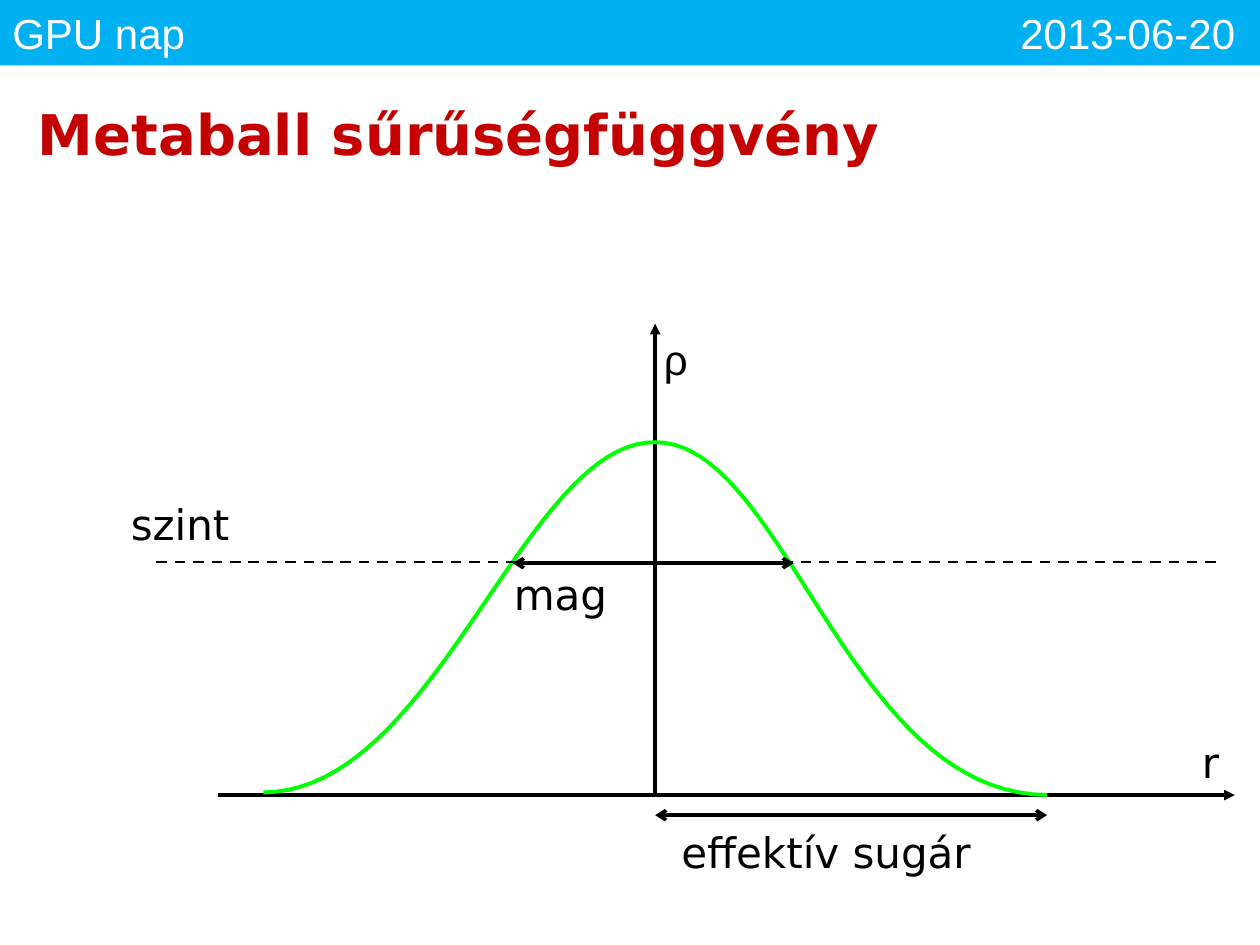
import dataclasses

import lxml.etree
import pptx
import pptx.dml.color
import pptx.enum.dml
import pptx.enum.shapes
import pptx.enum.text
import pptx.oxml
import pptx.oxml.ns
import pptx.util
from pptx.util import Inches

Point = tuple[float, float]


@dataclasses.dataclass(frozen=True)
class Theme:
    band: str = "00B0F0"
    white: str = "FFFFFF"
    title: str = "C40000"
    ink: str = "000000"
    curve: str = "00FF00"
    title_size: float = 32
    text_size: float = 24
    axis_width: float = 2
    level_width: float = 1.5
    curve_width: float = 2.25
    heading_font: str = "DejaVu Sans"
    band_font: str = "Arial"


@dataclasses.dataclass(frozen=True)
class Line:
    start: Point
    end: Point
    width: float
    head: str = ""
    tail: str = ""
    dashed: bool = False


@dataclasses.dataclass(frozen=True)
class Label:
    text: str
    left: float
    top: float
    width: float
    font: str


THEME = Theme()
ORIGIN_X, ORIGIN_Y = 5.2, 6.31
RADIUS_X = 8.31
LEVEL_Y = 4.46
LABEL_HEIGHT = 0.5
CURVE_STEPS = 40

LINES = [
    Line((ORIGIN_X, ORIGIN_Y), (ORIGIN_X, 2.57), THEME.axis_width, tail="triangle"),
    Line((1.73, ORIGIN_Y), (9.8, ORIGIN_Y), THEME.axis_width, tail="triangle"),
    Line((ORIGIN_X, 6.47), (RADIUS_X, 6.47), THEME.axis_width, "arrow", "arrow"),
    Line((9.65, LEVEL_Y), (1.22, LEVEL_Y), THEME.level_width, dashed=True),
    Line((4.07, 4.47), (6.3, 4.47), THEME.axis_width, "arrow", "arrow"),
]

LABELS = [
    Label("r", 9.44, 5.8, 0.35, THEME.heading_font),
    Label("ρ", 5.17, 2.6, 0.39, THEME.band_font),
    Label("effektív sugár", 5.31, 6.51, 2.53, THEME.heading_font),
    Label("szint", 0.94, 3.91, 0.99, THEME.heading_font),
    Label("mag", 3.98, LEVEL_Y, 0.94, THEME.heading_font),
]

# Each half of the bell: start, two control points, end
BELL = [
    ((2.09, 6.29), (3.47, 6.28), (4.16, 3.5), (ORIGIN_X, 3.51)),
    ((ORIGIN_X, 3.51), (6.23, 3.51), (6.73, 6.3), (RADIUS_X, ORIGIN_Y)),
]


def color(value: str) -> pptx.dml.color.RGBColor:
    return pptx.dml.color.RGBColor.from_string(value)


def style_text(frame, font: str, size: float, ink: str, bold: bool = False) -> None:
    for para in frame.paragraphs:
        para.alignment = pptx.enum.text.PP_ALIGN.LEFT
        for span in para.runs:
            span.font.name = font
            span.font.size = pptx.util.Pt(size)
            span.font.bold = bold
            span.font.color.rgb = color(ink)


def draw_band(page) -> None:
    band = page.shapes.add_shape(
        pptx.enum.shapes.MSO_SHAPE.RECTANGLE, 0, 0, Inches(10), Inches(0.52))
    band.shadow.inherit = False
    band.fill.solid()
    band.fill.fore_color.rgb = color(THEME.band)
    band.line.fill.background()
    frame = band.text_frame
    frame.text = "GPU nap\t2013-06-20"
    frame.vertical_anchor = pptx.enum.text.MSO_ANCHOR.MIDDLE
    style_text(frame, THEME.band_font, THEME.text_size, THEME.white)
    # The date starts at a tab stop
    tabs = pptx.oxml.parse_xml(
        f'<a:tabLst {pptx.oxml.ns.nsdecls("a")}>'
        f'<a:tab pos="{Inches(8)}" algn="l"/></a:tabLst>')
    frame.paragraphs[0]._p.get_or_add_pPr().append(tabs)


def draw_title(page) -> None:
    title = page.shapes.title
    title.left, title.top = Inches(0.2), Inches(0.52)
    title.width, title.height = Inches(9.61), Inches(1.08)
    frame = title.text_frame
    frame.text = "Metaball sűrűségfüggvény"
    frame.auto_size = pptx.enum.text.MSO_AUTO_SIZE.NONE
    frame.vertical_anchor = pptx.enum.text.MSO_ANCHOR.MIDDLE
    style_text(frame, THEME.heading_font, THEME.title_size, THEME.title, bold=True)


def draw_line(page, line: Line) -> None:
    connector = page.shapes.add_connector(
        pptx.enum.shapes.MSO_CONNECTOR.STRAIGHT,
        *(Inches(value) for value in line.start + line.end))
    connector.line.color.rgb = color(THEME.ink)
    connector.line.width = pptx.util.Pt(line.width)
    if line.dashed:
        connector.line.dash_style = pptx.enum.dml.MSO_LINE.DASH
    outline = connector.line._get_or_add_ln()
    for tag, kind in (("a:headEnd", line.head), ("a:tailEnd", line.tail)):
        if kind:
            lxml.etree.SubElement(outline, pptx.oxml.ns.qn(tag), type=kind)
    lxml.etree.SubElement(
        connector._element.spPr, pptx.oxml.ns.qn("a:effectLst"))


def bezier_point(controls: tuple[Point, ...], t: float) -> Point:
    u = 1 - t
    weights = (u**3, 3 * u * u * t, 3 * u * t * t, t**3)
    x, y = (sum(w * p[axis] for w, p in zip(weights, controls)) for axis in (0, 1))
    return Inches(x), Inches(y)


def draw_bell(page) -> None:
    points = [bezier_point(half, step / CURVE_STEPS)
              for half in BELL for step in range(1, CURVE_STEPS + 1)]
    builder = page.shapes.build_freeform(*bezier_point(BELL[0], 0))
    builder.add_line_segments(points, close=False)
    bell = builder.convert_to_shape()
    bell.shadow.inherit = False
    bell.fill.background()
    bell.line.color.rgb = color(THEME.curve)
    bell.line.width = pptx.util.Pt(THEME.curve_width)


def draw_label(page, label: Label) -> None:
    box = page.shapes.add_textbox(
        Inches(label.left), Inches(label.top),
        Inches(label.width), Inches(LABEL_HEIGHT))
    frame = box.text_frame
    frame.text = label.text
    frame.word_wrap = False
    frame.auto_size = pptx.enum.text.MSO_AUTO_SIZE.SHAPE_TO_FIT_TEXT
    style_text(frame, label.font, THEME.text_size, THEME.ink)


def main() -> None:
    deck = pptx.Presentation()
    deck.slide_width, deck.slide_height = Inches(10), Inches(7.5)
    page = deck.slides.add_slide(deck.slide_layouts.get_by_name("Title Only"))

    # Header
    draw_band(page)
    draw_title(page)

    # Axes, then the density curve, then level and extents
    for line in LINES[:2]:
        draw_line(page, line)
    draw_bell(page)
    for line in LINES[2:]:
        draw_line(page, line)
    for label in LABELS:
        draw_label(page, label)

    deck.save("out.pptx")


if __name__ == "__main__":
    main()
